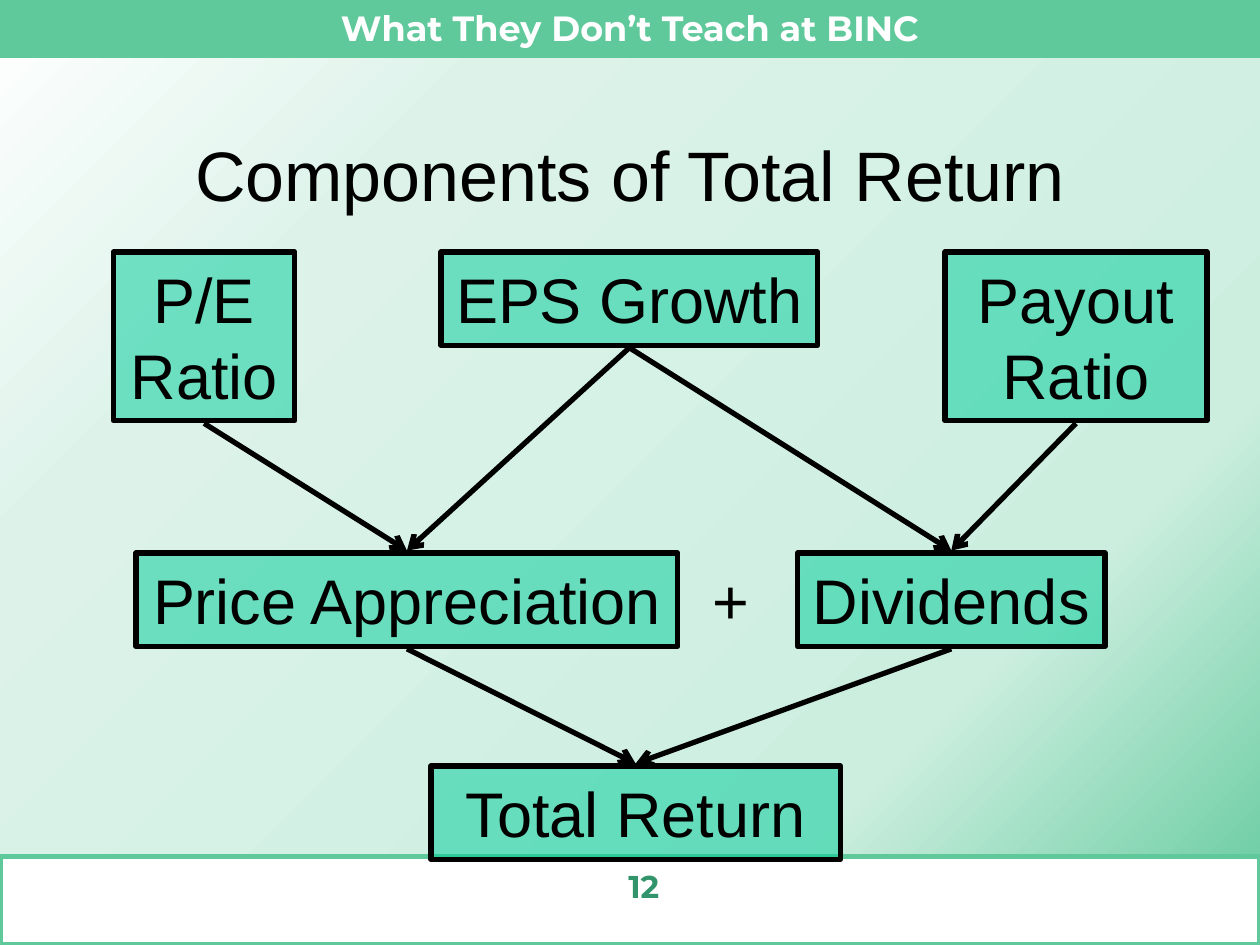
from dataclasses import dataclass

from lxml.etree import SubElement
from pptx import Presentation
from pptx.dml.color import RGBColor
from pptx.enum.shapes import MSO_CONNECTOR as Conn, MSO_SHAPE as Shape
from pptx.enum.text import MSO_ANCHOR as Anchor, PP_ALIGN as Align
from pptx.oxml.ns import qn
from pptx.util import Inches, Pt

COLS, ROWS = 100, 75          # grid cells across and down the slide
GAP = 0.2                     # cells between an arrow's end and its box
GREEN, TEAL, DARK = "60C99C", "00CC99", "32946A"
BLACK, WHITE = "000000", "FFFFFF"
BACKGROUND = [(0, WHITE), (25, "DDF3EA"), (75, "CCEEDF"), (100, GREEN)]


@dataclass(frozen=True)
class Box:
    text: str
    col: float
    row: float
    cols: float
    rows: float = 7.4
    wrap: bool = True

    @property
    def middle(self) -> float:
        return self.col + self.cols / 2


PE = Box("P/E Ratio", 9, 20, 14.4, 13.4)
EPS = Box("EPS Growth", 35, 20, 29.9, wrap=False)
PAYOUT = Box("Payout Ratio", 75, 20, 20.8, 13.4)
PRICE = Box("Price Appreciation", 10.8, 43.9, 43, wrap=False)
DIVIDENDS = Box("Dividends", 63.3, 43.9, 24.4, wrap=False)
TOTAL = Box("Total Return", 34.2, 60.8, 32.5)
BOXES = [PE, EPS, PAYOUT, PRICE, DIVIDENDS, TOTAL]
ARROWS = [(PE, PRICE), (EPS, PRICE), (EPS, DIVIDENDS), (PAYOUT, DIVIDENDS),
          (PRICE, TOTAL), (DIVIDENDS, TOTAL)]

prs = Presentation()
prs.slide_width, prs.slide_height = Inches(10), Inches(7.5)
s = prs.slides.add_slide(prs.slide_layouts[6])


def rgb(color: str) -> RGBColor:
    return RGBColor.from_string(color)


def x(col: float) -> int:
    return round(prs.slide_width * col / COLS)


def y(row: float) -> int:
    return round(prs.slide_height * row / ROWS)


def place(b: Box) -> tuple[int, int, int, int]:
    return x(b.col), y(b.row), x(b.cols), y(b.rows)


def write(sp, b: Box, size: int, color: str = BLACK, align=Align.CENTER,
          font: str = "Arial", anchor=Anchor.MIDDLE) -> None:
    tf = sp.text_frame
    tf.word_wrap, tf.vertical_anchor = b.wrap, anchor
    p = tf.paragraphs[0]
    p.text, p.alignment = b.text, align
    p.font.name, p.font.size = font, Pt(size)
    p.font.bold = font == "Montserrat"
    p.font.color.rgb = rgb(color)


def add_rect(b: Box, fill: str, line: str, opacity: int = 100):
    sp = s.shapes.add_shape(Shape.RECTANGLE, *place(b))
    sp.shadow.inherit = False
    sp.fill.solid()
    sp.fill.fore_color.rgb = rgb(fill)
    sp.line.color.rgb, sp.line.width = rgb(line), Pt(3)
    if opacity < 100:
        clr = sp.element.spPr.find(qn("a:solidFill"))[0]
        SubElement(clr, qn("a:alpha"), val=str(opacity * 1000))
    return sp


def add_text(b: Box, size: int, **style) -> None:
    write(s.shapes.add_textbox(*place(b)), b, size, **style)


def add_arrow(start: Box, end: Box) -> None:
    c = s.shapes.add_connector(Conn.STRAIGHT,
                               x(start.middle), y(start.row + start.rows + GAP),
                               x(end.middle), y(end.row - GAP))
    c.line.color.rgb, c.line.width = rgb(BLACK), Pt(3)
    SubElement(c.line._get_or_add_ln(), qn("a:tailEnd"), type="arrow")
    SubElement(c.element.spPr, qn("a:effectLst"))


def paint_background() -> None:
    fill = s.background.fill
    fill.gradient()
    fill.gradient_angle = 315  # counter-clockwise: runs to the lower right
    stops = s.element.xpath(".//p:bg//a:gsLst")[0]
    for gs in list(stops):
        stops.remove(gs)
    for pos, color in BACKGROUND:
        gs = SubElement(stops, qn("a:gs"), pos=str(pos * 1000))
        SubElement(gs, qn("a:srgbClr"), val=color)


# Background, footer and header bands, page number
paint_background()
add_rect(Box("", 0, 68, COLS, 7), WHITE, GREEN)
header = Box("What They Don’t Teach at BINC", 0, 0, COLS, 4.4)
write(add_rect(header, GREEN, GREEN), header, 20, WHITE,
      font="Montserrat", anchor=Anchor.TOP)
add_text(Box("12", 32.5, 68.3, 20.8, 5), 18, color=DARK, align=Align.RIGHT,
         font="Montserrat", anchor=Anchor.TOP)

# Title and plus sign
add_text(Box("Components of Total Return", 7.5, 7.5, 85, 12.5), 40)
add_text(Box("+", 55.6, 44.1, 5.8, 7), 36, align=Align.LEFT)

# Diagram
for box in BOXES:
    write(add_rect(box, TEAL, BLACK, opacity=51), box, 36)
for start, end in ARROWS:
    add_arrow(start, end)

prs.save("out.pptx")
